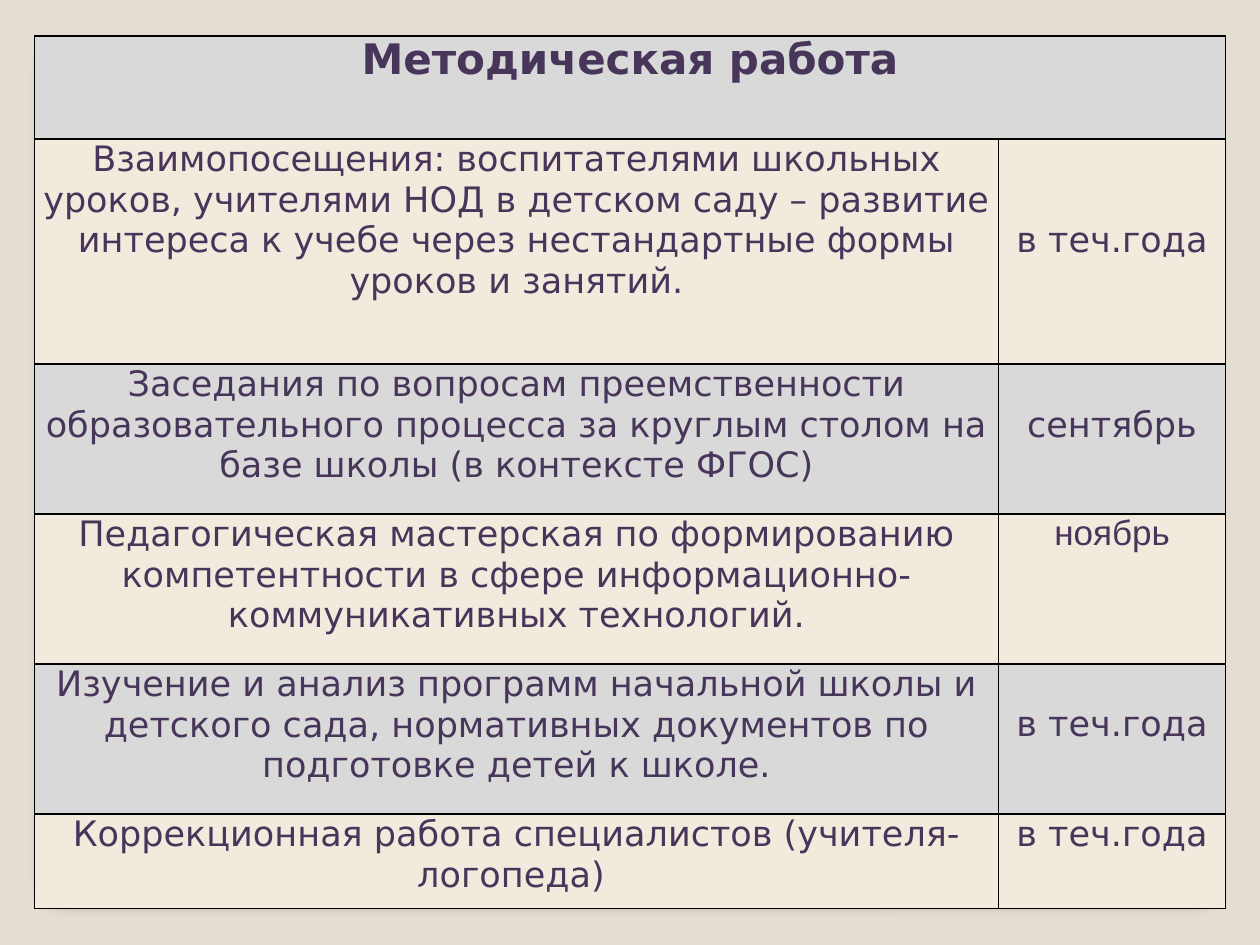
"""Build the slide with the schedule of methodical work."""
from dataclasses import dataclass

from lxml.etree import SubElement
from pptx import Presentation
from pptx.dml.color import RGBColor
from pptx.enum.shapes import MSO_SHAPE as Shape
from pptx.enum.text import PP_ALIGN as Align
from pptx.oxml.ns import qn
from pptx.util import Pt


@dataclass(frozen=True)
class Theme:
    background: str = "E3DED1"
    panel: str = "FFFFFF"
    panel_line: str = "A4A4A4"
    ink: str = "48365A"
    border: str = "000000"
    gray: str = "D9D9D9"
    cream: str = "F3EADE"
    font: str = "DejaVu Sans"
    alt_font: str = "Arial"
    title_size: int = 24
    body_size: int = 20


theme = Theme()


def write_cell(cell, text, fill, size=theme.body_size, bold=False, font=theme.font, top=0):
    margins = {"margin_left": 5, "margin_right": 5, "margin_top": top, "margin_bottom": 0}
    for name, value in margins.items():
        setattr(cell, name, Pt(value))
    paragraph = cell.text_frame.paragraphs[0]
    paragraph.alignment = Align.CENTER
    run = paragraph.add_run()
    run.text = text
    for name, value in {"size": Pt(size), "bold": bold, "name": font}.items():
        setattr(run.font, name, value)
    run.font.color.rgb = RGBColor.from_string(theme.ink)
    paint_cell(cell, fill)


def paint_cell(cell, fill):
    properties = cell._tc.get_or_add_tcPr()
    for side in ("a:lnL", "a:lnR", "a:lnT", "a:lnB"):
        line = SubElement(properties, qn(side), w=str(Pt(1)))
        SubElement(SubElement(line, qn("a:solidFill")), qn("a:srgbClr"), val=theme.border)
    cell.fill.solid()
    cell.fill.fore_color.rgb = RGBColor.from_string(fill)


deck = Presentation()
deck.slide_width, deck.slide_height = Pt(720), Pt(540)
slide = deck.slides.add_slide(deck.slide_layouts[6])
slide.background.fill.solid()
slide.background.fill.fore_color.rgb = RGBColor.from_string(theme.background)

panel = slide.shapes.add_shape(Shape.ROUNDED_RECTANGLE, Pt(23.8), Pt(25.9), Pt(671.8), Pt(488.2))
panel.adjustments[0] = 0.021
panel.fill.solid()
panel.fill.fore_color.rgb = RGBColor.from_string(theme.panel)
panel.line.color.rgb = RGBColor.from_string(theme.panel_line)
panel.line.width = Pt(0.16)
panel.shadow.inherit = False
shadow = SubElement(
    panel._element.spPr.find(qn("a:effectLst")), qn("a:outerShdw"),
    blurRad=str(Pt(6)), dist=str(Pt(4)), dir="5400000", rotWithShape="0",
)
shadow_color = SubElement(shadow, qn("a:srgbClr"), val=theme.border)
SubElement(shadow_color, qn("a:alpha"), val="25000")

activities = [
    ("Взаимопосещения: воспитателями школьных уроков, учителями НОД в детском саду – "
     "развитие интереса к учебе через нестандартные формы уроков и занятий.",
     "в теч.года", 128.6, 2, theme.font),
    ("Заседания по вопросам преемственности образовательного процесса за круглым столом "
     "на базе школы (в контексте ФГОС)",
     "сентябрь", 85.7, 1, theme.font),
    ("Педагогическая мастерская по формированию компетентности в сфере "
     "информационно-коммуникативных технологий.",
     "ноябрь", 85.7, 0, theme.alt_font),
    ("Изучение и анализ программ начальной школы и детского сада, нормативных документов "
     "по подготовке детей к школе.",
     "в теч.года", 85.7, 1, theme.font),
    ("Коррекционная работа специалистов (учителя- логопеда) ",
     "в теч.года", 54.2, 0, theme.font),
]
column_widths = [551, 129.6]
title_height = 58.9
line_height = 23.2
table_height = title_height + sum(height for _, _, height, _, _ in activities)

schedule = slide.shapes.add_table(
    len(activities) + 1, 2, Pt(19.7), Pt(20.5), Pt(sum(column_widths)), Pt(table_height)
).table
schedule.first_row = schedule.horz_banding = False
for column, width in zip(schedule.columns, column_widths):
    column.width = Pt(width)

schedule.rows[0].height = Pt(title_height)
heading = schedule.cell(0, 0)
heading.merge(schedule.cell(0, 1))
write_cell(heading, "Методическая работа", theme.gray, theme.title_size, bold=True)
paint_cell(schedule.cell(0, 1), theme.gray)

for row, (activity, term, height, lines_above, term_font) in enumerate(activities, start=1):
    schedule.rows[row].height = Pt(height)
    fill = theme.cream if row % 2 else theme.gray
    write_cell(schedule.cell(row, 0), activity, fill)
    write_cell(schedule.cell(row, 1), term, fill, font=term_font, top=lines_above * line_height)

deck.save("out.pptx")
